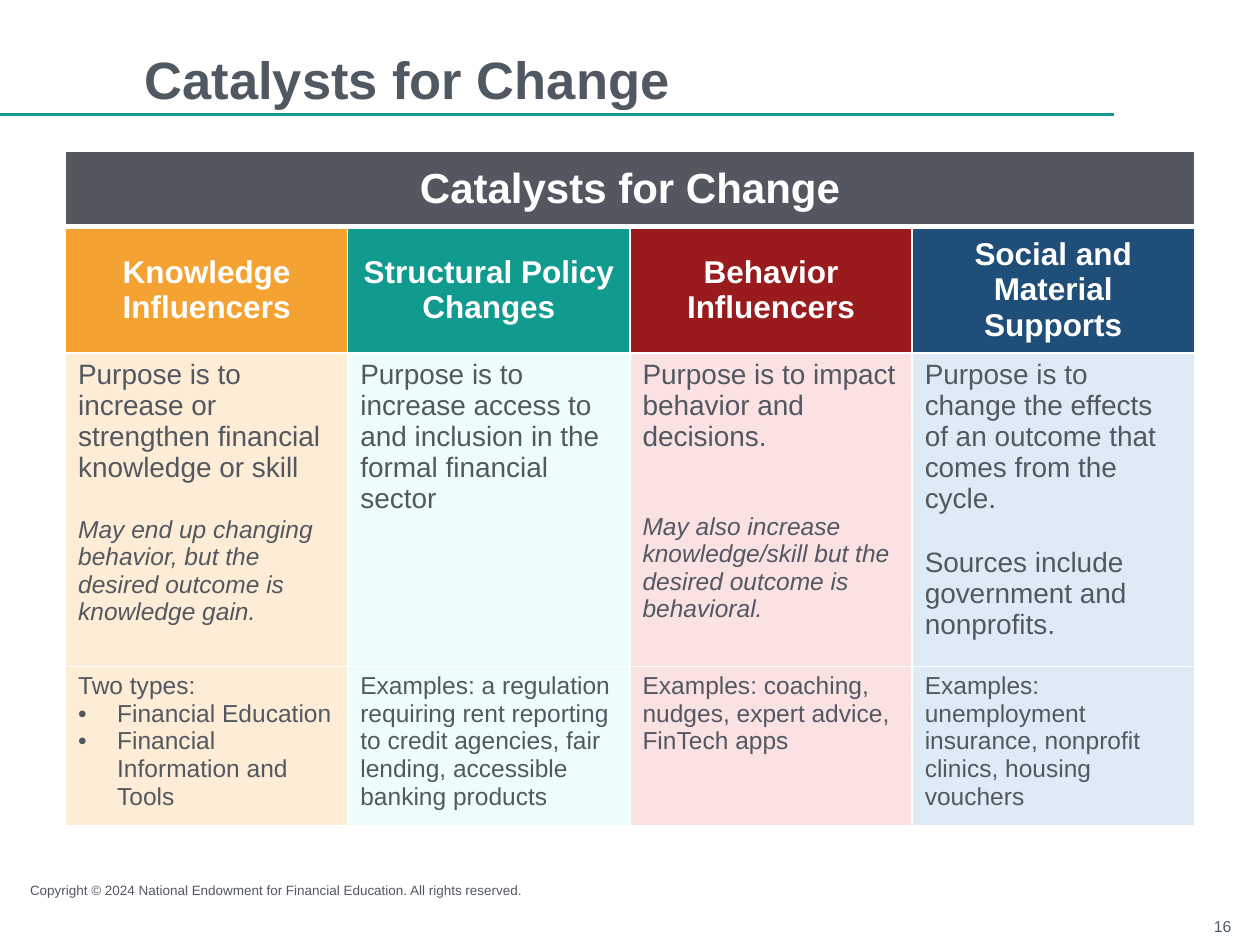
from lxml.etree import SubElement
from pptx import Presentation
from pptx.dml.color import RGBColor
from pptx.enum.shapes import MSO_CONNECTOR
from pptx.enum.text import MSO_ANCHOR, PP_ALIGN
from pptx.oxml import parse_xml
from pptx.oxml.ns import nsdecls, qn
from pptx.util import Inches, Pt

WHITE = RGBColor(0xFF, 0xFF, 0xFF)
SLATE = RGBColor(0x53, 0x58, 0x60)
GRAY = RGBColor(0x50, 0x59, 0x61)
TEAL = RGBColor(0x11, 0x9B, 0x8E)
ORANGE = RGBColor(0xF4, 0xA2, 0x31)
RED = RGBColor(0x99, 0x1B, 0x1E)
NAVY = RGBColor(0x1F, 0x4E, 0x79)
PALE_ORANGE = RGBColor(0xFD, 0xEC, 0xD6)
PALE_TEAL = RGBColor(0xED, 0xFD, 0xFB)
PALE_RED = RGBColor(0xFA, 0xE2, 0xE3)
PALE_BLUE = RGBColor(0xDE, 0xEB, 0xF7)

COLUMN_WIDTH = 2.24
ROW_HEIGHTS = [0.6, 0.93, 2.32, 1.19]

CATALYSTS = [
    ("Knowledge Influencers", ORANGE, PALE_ORANGE,
     ["Purpose is to increase or strengthen financial knowledge or skill",
      "May end up changing behavior, but the desired outcome is knowledge gain."],
     16, True, 18.4,
     ["Two types:", "Financial Education", "Financial Information and Tools"]),
    ("Structural Policy Changes", TEAL, PALE_TEAL,
     ["Purpose is to increase access to and inclusion in the formal financial sector"],
     16, False, 0,
     ["Examples: a regulation requiring rent reporting to credit agencies, "
      "fair lending, accessible banking products"]),
    ("Behavior Influencers", RED, PALE_RED,
     ["Purpose is to impact behavior and decisions.",
      "May also increase knowledge/skill but the desired outcome is behavioral."],
     16, True, 34.5,
     ["Examples: coaching, nudges, expert advice, FinTech apps"]),
    ("Social and Material Supports", NAVY, PALE_BLUE,
     ["Purpose is to change the effects of an outcome that comes from the cycle.",
      "Sources include government and nonprofits."],
     16, False, 18.4,
     ["Examples: unemployment insurance, nonprofit clinics, housing vouchers"]),
]


def write(text_frame, lines, size, color, bold=False, align=PP_ALIGN.LEFT):
    text_frame.text = "\n".join(lines)
    text_frame.word_wrap = True
    for paragraph in text_frame.paragraphs:
        paragraph.alignment = align
        for run in paragraph.runs:
            run.font.name = "Arial"
            run.font.size = Pt(size)
            run.font.bold = bold
            run.font.color.rgb = color


def paint(cell, color, bottom_width=1):
    properties = cell._tc.get_or_add_tcPr()
    for side, width in (("L", 1), ("R", 1), ("T", 1), ("B", bottom_width)):
        properties.append(parse_xml(
            f'<a:ln{side} {nsdecls("a")} w="{Pt(width)}"><a:solidFill>'
            f'<a:srgbClr val="{WHITE}"/></a:solidFill></a:ln{side}>'))
    cell.fill.solid()
    cell.fill.fore_color.rgb = color


presentation = Presentation()
presentation.slide_width = Inches(10)
presentation.slide_height = Inches(7.5)
slide = presentation.slides.add_slide(presentation.slide_layouts[6])

rule = slide.shapes.add_connector(
    MSO_CONNECTOR.STRAIGHT, Inches(-0.02), Inches(0.91), Inches(8.84), Inches(0.91))
rule.line.color.rgb = TEAL
rule.line.width = Pt(1.75)
SubElement(rule._element.spPr, qn("a:effectLst"))

for text, box, size, color, bold, align, anchor, spacing in (
    ("Catalysts for Change", (1.05, 0.07, 7.5, 0.86), 30, GRAY, True,
     PP_ALIGN.LEFT, MSO_ANCHOR.BOTTOM, 0.9),
    ("Copyright © 2024 National Endowment for Financial Education. All rights reserved.",
     (0.14, 6.88, 4.46, 0.3), 7.7, SLATE, False, PP_ALIGN.LEFT, MSO_ANCHOR.BOTTOM, 0.9),
    ("16", (7.62, 7.2, 2.25, 0.3), 9, GRAY, False, PP_ALIGN.RIGHT, MSO_ANCHOR.MIDDLE, 1.0),
):
    text_frame = slide.shapes.add_textbox(*map(Inches, box)).text_frame
    write(text_frame, [text], size, color, bold, align)
    text_frame.vertical_anchor = anchor
    text_frame.paragraphs[0].line_spacing = spacing

table = slide.shapes.add_table(
    len(ROW_HEIGHTS), len(CATALYSTS), Inches(0.52), Inches(1.2),
    Inches(COLUMN_WIDTH * len(CATALYSTS)), Inches(sum(ROW_HEIGHTS))).table
table.first_row = False
table.horz_banding = False
for row, height in zip(table.rows, ROW_HEIGHTS):
    row.height = Inches(height)

banner = table.cell(0, 0)
banner.merge(table.cell(0, len(CATALYSTS) - 1))
write(banner.text_frame, ["Catalysts for Change"], 24, WHITE, True, PP_ALIGN.CENTER)
banner.vertical_anchor = MSO_ANCHOR.MIDDLE

for column, catalyst in enumerate(CATALYSTS):
    heading, strong, pale, purpose, size, has_note, gap, examples = catalyst
    table.columns[column].width = Inches(COLUMN_WIDTH)
    for row, color in enumerate((SLATE, strong, pale, pale)):
        paint(table.cell(row, column), color, 3 if row == 0 else 1)

    heading_cell = table.cell(1, column)
    write(heading_cell.text_frame, [heading], 18, WHITE, True, PP_ALIGN.CENTER)
    heading_cell.vertical_anchor = MSO_ANCHOR.MIDDLE

    purpose_frame = table.cell(2, column).text_frame
    write(purpose_frame, purpose, size, SLATE)
    for paragraph in purpose_frame.paragraphs[1:]:
        paragraph.space_before = Pt(gap)
        if has_note:
            paragraph.runs[0].font.size = Pt(14)
            paragraph.runs[0].font.italic = True

    examples_frame = table.cell(3, column).text_frame
    write(examples_frame, examples, 14, SLATE)
    for paragraph in examples_frame.paragraphs[1:]:
        properties = paragraph._p.get_or_add_pPr()
        properties.set("marL", str(Inches(0.31)))
        properties.set("indent", str(Inches(-0.31)))
        SubElement(properties, qn("a:buFont"), typeface="Arial")
        SubElement(properties, qn("a:buChar"), char="•")

presentation.save("out.pptx")
